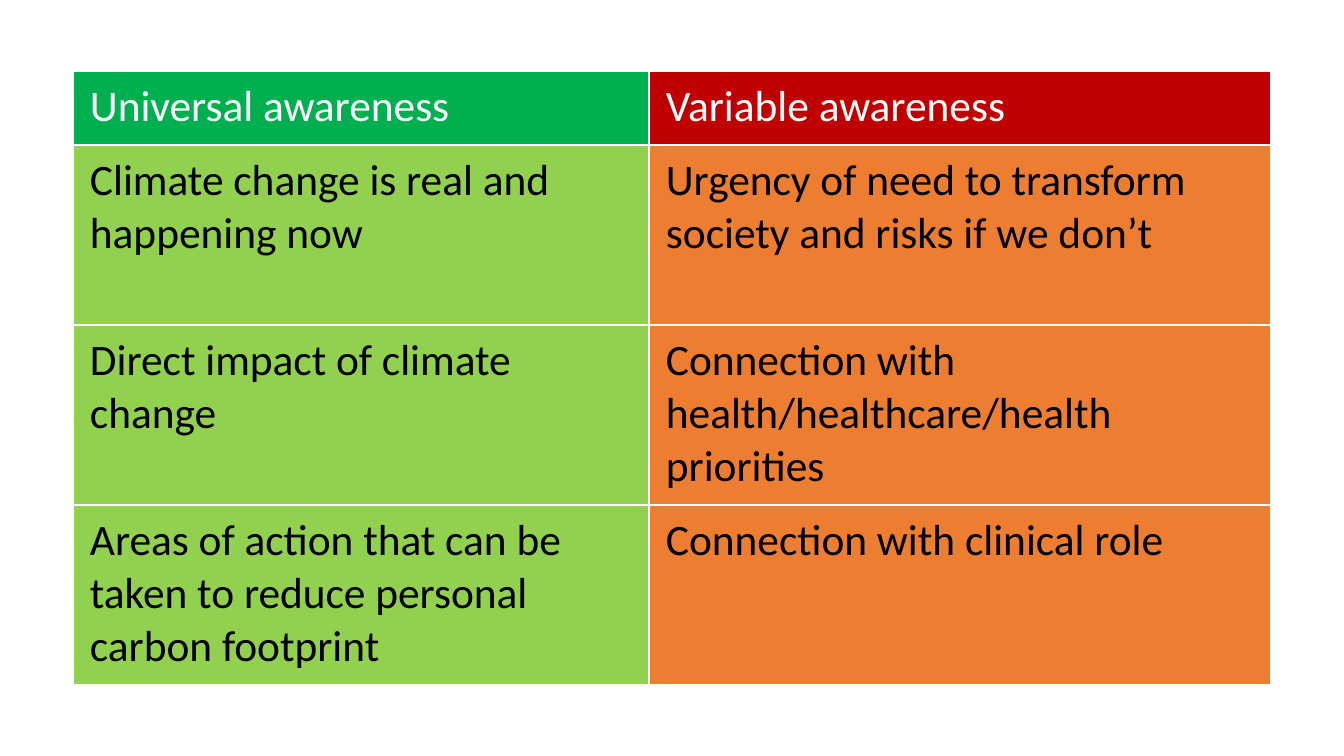
from lxml import etree
from pptx import Presentation
from pptx.dml.color import RGBColor
from pptx.enum.text import MSO_ANCHOR
from pptx.oxml.ns import qn
from pptx.util import Pt

EMU_PER_PX = 914400 / 100.8
TOP = MSO_ANCHOR.TOP

FONT = "Calibri"
FONT_SIZE = 31
WHITE = "FFFFFF"
BLACK = "000000"
HEADER_FILLS = ("00B050", "C00000")
BODY_FILLS = ("92D050", "ED7D31")

TABLE_LEFT, TABLE_TOP = 73, 71
COLUMN_WIDTHS = (576, 622)
HEADER_HEIGHT, BODY_HEIGHT = 74, 180
MARGIN_X, MARGIN_Y = 17, 9

AWARENESS = (
    ("Universal awareness", "Variable awareness"),
    ("Climate change is real and happening now",
     "Urgency of need to transform society and risks if we don’t"),
    ("Direct impact of climate change",
     "Connection with health/healthcare/health priorities"),
    ("Areas of action that can be taken to reduce personal carbon footprint",
     "Connection with clinical role"),
)


def px(length):
    return round(length * EMU_PER_PX)


def color(hex_value):
    return RGBColor.from_string(hex_value)


def add_borders(cell, hex_value, points):
    """Draw one solid line on all four sides; call before filling the cell."""
    properties = cell._tc.get_or_add_tcPr()
    for side in ("a:lnL", "a:lnR", "a:lnT", "a:lnB"):
        line = etree.SubElement(properties, qn(side), w=str(Pt(points)))
        fill = etree.SubElement(line, qn("a:solidFill"))
        etree.SubElement(fill, qn("a:srgbClr"), val=hex_value)


def write_cell(cell, text, fill, text_color):
    add_borders(cell, WHITE, 1)
    cell.fill.solid()
    cell.fill.fore_color.rgb = color(fill)
    cell.margin_left = cell.margin_right = px(MARGIN_X)
    cell.margin_top = cell.margin_bottom = px(MARGIN_Y)
    cell.vertical_anchor = TOP
    run = cell.text_frame.paragraphs[0].add_run()
    run.text = text
    run.font.name = FONT
    run.font.size = Pt(FONT_SIZE)
    run.font.bold = False
    run.font.color.rgb = color(text_color)


def add_awareness_table(slide):
    heights = [HEADER_HEIGHT] + [BODY_HEIGHT] * (len(AWARENESS) - 1)
    table = slide.shapes.add_table(
        len(heights), len(COLUMN_WIDTHS), px(TABLE_LEFT), px(TABLE_TOP),
        px(sum(COLUMN_WIDTHS)), px(sum(heights))).table
    table.horz_banding = False
    for column, width in zip(table.columns, COLUMN_WIDTHS):
        column.width = px(width)
    for row_index, (height, texts) in enumerate(zip(heights, AWARENESS)):
        table.rows[row_index].height = px(height)
        is_header = row_index == 0
        fills = HEADER_FILLS if is_header else BODY_FILLS
        text_color = WHITE if is_header else BLACK
        for column_index, (text, fill) in enumerate(zip(texts, fills)):
            write_cell(table.cell(row_index, column_index), text, fill, text_color)


def main():
    presentation = Presentation()
    presentation.slide_width = px(1344)
    presentation.slide_height = px(756)
    slide = presentation.slides.add_slide(presentation.slide_layouts[6])
    add_awareness_table(slide)
    presentation.save("out.pptx")


if __name__ == "__main__":
    main()
